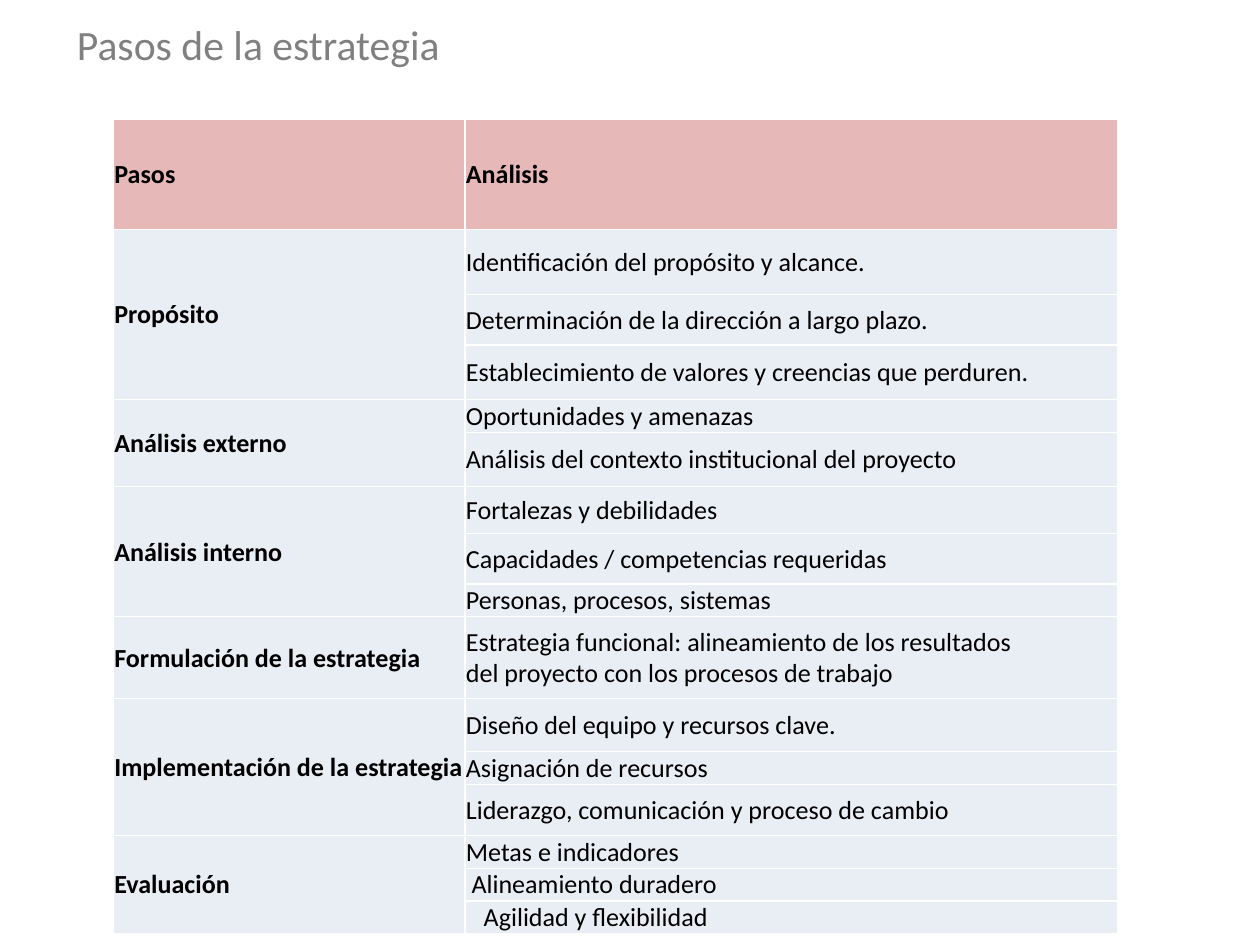
from dataclasses import dataclass

from lxml.etree import SubElement
from pptx import Presentation
from pptx.dml.color import RGBColor
from pptx.enum.text import MSO_ANCHOR, PP_ALIGN
from pptx.oxml.ns import qn
from pptx.util import Inches, Pt


@dataclass(frozen=True)
class Theme:
    """Colours, font and sizes of the slide."""
    font: str = "Calibri"
    title_size: int = 32
    body_size: int = 20
    title: str = "808080"
    ink: str = "000000"
    header: str = "E6B9B8"
    body: str = "E9EDF4"
    border: str = "FFFFFF"
    border_width: int = 1


THEME = Theme()
COLUMN_WIDTHS = (3.75, 6.96)
HEADER = ("Pasos", "Análisis")
HEADER_HEIGHT = 1.18
CELL_INSET = 0.01
STEPS = (
    ("Propósito", (
        ("Identificación del propósito y alcance.", 0.69, 0),
        ("Determinación de la dirección a largo plazo.", 0.54, 0),
        ("Establecimiento de valores y creencias que perduren.", 0.58, 0))),
    ("Análisis externo", (
        ("Oportunidades y amenazas", 0.29, 0),
        ("Análisis del contexto institucional del proyecto", 0.58, 0))),
    ("Análisis interno", (
        ("Fortalezas y debilidades", 0.5, 0),
        ("Capacidades / competencias requeridas", 0.54, 0),
        ("Personas, procesos, sistemas", 0.29, 0))),
    ("Formulación de la estrategia", (
        ("Estrategia funcional: alineamiento de los resultados\n"
         "del proyecto con los procesos de trabajo", 0.87, 0),)),
    ("Implementación de la estrategia", (
        ("Diseño del equipo y recursos clave.", 0.57, 0),
        ("Asignación de recursos", 0.29, 0),
        ("Liderazgo, comunicación y proceso de cambio", 0.54, 0))),
    ("Evaluación", (
        ("Metas e indicadores", 0.29, 0),
        ("Alineamiento duradero", 0.29, 0.06),
        ("Agilidad y flexibilidad", 0.15, 0.19))),
)


def style_text(frame, size, color, bold=False):
    """Format every paragraph of a text frame."""
    for paragraph in frame.paragraphs:
        paragraph.alignment = PP_ALIGN.LEFT
        font = paragraph.font
        font.name, font.size, font.bold = THEME.font, Pt(size), bold
        font.color.rgb = RGBColor.from_string(color)


def set_title(slide, text):
    """Place and format the slide title."""
    title = slide.shapes.title
    title.left, title.top = Inches(0.69), Inches(0)
    title.width, title.height = Inches(12.1), Inches(0.93)
    frame = title.text_frame
    frame.text = text
    frame.vertical_anchor = MSO_ANCHOR.MIDDLE
    frame.margin_left = frame.margin_right = Inches(0.13)
    frame.margin_top = frame.margin_bottom = Inches(0.07)
    style_text(frame, THEME.title_size, THEME.title)


def add_borders(cell):
    """Draw a thin line on the four sides of a cell."""
    properties = cell._tc.get_or_add_tcPr()
    for side in ("a:lnL", "a:lnR", "a:lnT", "a:lnB"):
        line = SubElement(properties, qn(side), w=str(Pt(THEME.border_width)))
        fill = SubElement(line, qn("a:solidFill"))
        SubElement(fill, qn("a:srgbClr"), val=THEME.border)


def style_cell(cell, fill, bold=False, indent=0):
    """Set the margins, borders, fill and text format of a cell."""
    cell.vertical_anchor = MSO_ANCHOR.MIDDLE
    cell.margin_left = Inches(CELL_INSET + indent)
    cell.margin_right = cell.margin_top = Inches(CELL_INSET)
    cell.margin_bottom = Inches(0)
    add_borders(cell)
    cell.fill.solid()
    cell.fill.fore_color.rgb = RGBColor.from_string(fill)
    style_text(cell.text_frame, THEME.body_size, THEME.ink, bold)


def add_steps_table(slide):
    """Build the table of steps, each merged over its analyses."""
    heights = [HEADER_HEIGHT] + [
        height for _, analyses in STEPS for _, height, _ in analyses]
    table = slide.shapes.add_table(
        len(heights), len(COLUMN_WIDTHS), Inches(1.21), Inches(1.27),
        Inches(sum(COLUMN_WIDTHS)), Inches(sum(heights))).table
    table.first_row = table.horz_banding = False
    for column, width in zip(table.columns, COLUMN_WIDTHS):
        column.width = Inches(width)
    for row, height in zip(table.rows, heights):
        row.height = Inches(height)

    for column, heading in enumerate(HEADER):
        table.cell(0, column).text = heading
        style_cell(table.cell(0, column), THEME.header, bold=True)

    first = 1
    for step, analyses in STEPS:
        table.cell(first, 0).text = step
        for row, (analysis, _, indent) in enumerate(analyses, first):
            table.cell(row, 1).text = analysis
            style_cell(table.cell(row, 0), THEME.body, bold=True)
            style_cell(table.cell(row, 1), THEME.body, indent=indent)
        last = first + len(analyses) - 1
        if last > first:
            table.cell(first, 0).merge(table.cell(last, 0))
        first = last + 1


def main():
    """Create the slide and save it."""
    presentation = Presentation()
    presentation.slide_width = Inches(13.44)
    presentation.slide_height = Inches(10.09)
    slide = presentation.slides.add_slide(presentation.slide_layouts[5])
    set_title(slide, "Pasos de la estrategia")
    add_steps_table(slide)
    presentation.save("out.pptx")


if __name__ == "__main__":
    main()
